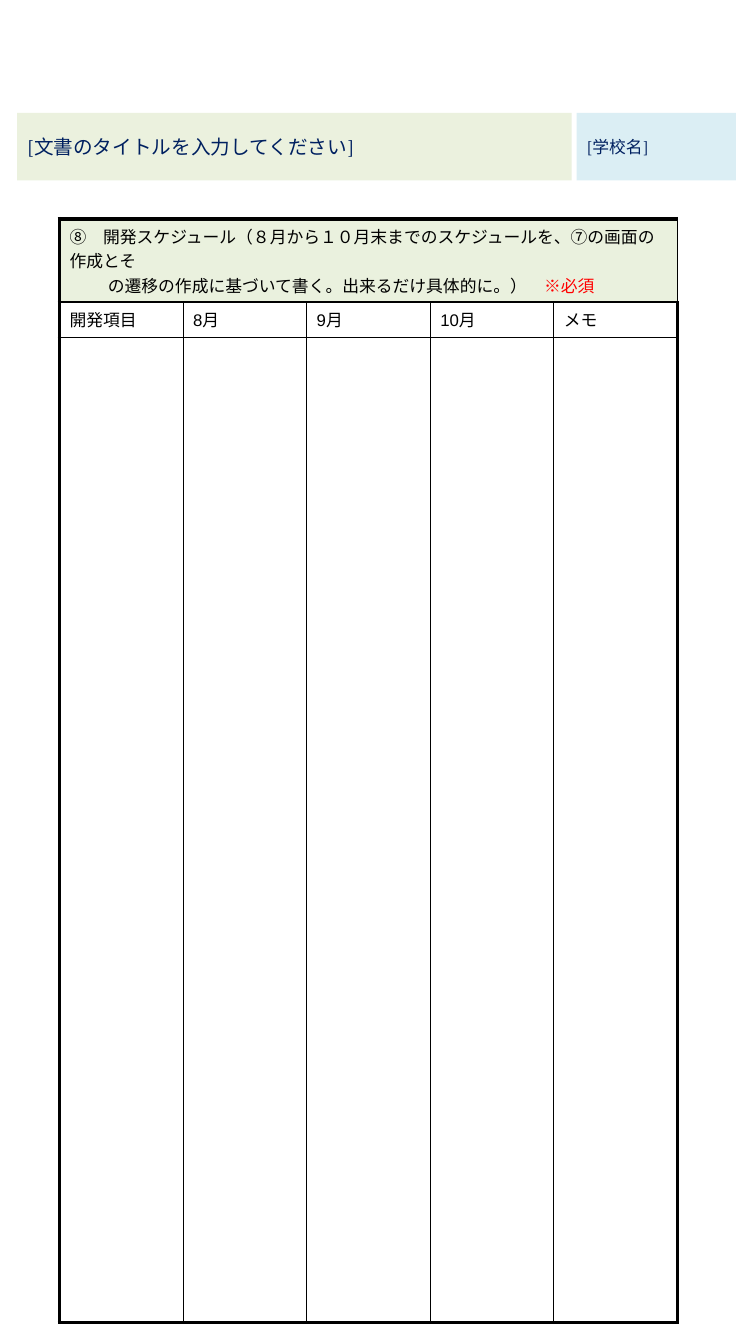
import pptx
import pptx.dml.color
import pptx.enum.shapes
import pptx.enum.text
import pptx.oxml
import pptx.oxml.ns
import pptx.util

Inches = pptx.util.Inches
Pt = pptx.util.Pt
COLORS = {"green": "EBF1DE", "head": "EAF1DE", "blue": "DBEEF4",
          "navy": "002060", "black": "000000", "red": "FF0000"}
ROWS = [0.82, 0.35, 9.77]
COLS = 5
LABELS = ["開発項目", "8月", "9月", "10月", "メモ"]
LINES = ["⑧　開発スケジュール（８月から１０月末までのスケジュールを、⑦の画面の作成とそ",
         "の遷移の作成に基づいて書く。出来るだけ具体的に。）　"]


def color(name):
    return pptx.dml.color.RGBColor.from_string(COLORS[name])


def write(para, text, size=12, font="Calibri", tint="black", align=None, indent=0):
    run = para.add_run()
    run.text = text
    run.font.size = Pt(size)
    run.font.name = font
    run.font.color.rgb = color(tint)
    if align is not None:
        para.alignment = align
    if indent:
        para._p.get_or_add_pPr().set("marL", str(Inches(indent)))


def band(shape, left, width, fill, text, size):
    shape.left, shape.top = Inches(left), Inches(1.12)
    shape.width, shape.height = Inches(width), Inches(0.67)
    shape.fill.solid()
    shape.fill.fore_color.rgb = color(fill)
    frame = shape.text_frame
    frame.word_wrap = True
    frame.auto_size = pptx.enum.text.MSO_AUTO_SIZE.NONE
    frame.vertical_anchor = pptx.enum.text.MSO_ANCHOR.MIDDLE
    write(frame.paragraphs[0], text, size=size, font="Cambria", tint="navy",
          align=pptx.enum.text.PP_ALIGN.JUSTIFY)


def border(cell, widths):
    props = cell._tc.get_or_add_tcPr()
    for side, width in zip("LRTB", widths):
        props.append(pptx.oxml.parse_xml(
            f'<a:ln{side} {pptx.oxml.ns.nsdecls("a")} w="{Pt(width)}">'
            f'<a:solidFill><a:srgbClr val="{COLORS["black"]}"/></a:solidFill>'
            f'</a:ln{side}>'))


def grid(slide):
    frame = slide.shapes.add_table(len(ROWS), COLS, Inches(0.59), Inches(2.17),
                                   Inches(6.13), Inches(sum(ROWS)))
    table = frame.table
    table.first_row = table.horz_banding = False
    for row, height in zip(table.rows, ROWS):
        row.height = Inches(height)
    rules = [3, 1, 0.75, 3]
    for r in range(len(ROWS)):
        for c in range(COLS):
            cell = table.cell(r, c)
            border(cell, [3 if c == 0 else 0.75, 3 if c == COLS - 1 else 0.75,
                          rules[r], rules[r + 1]])
            cell.fill.background()
    head = table.cell(0, 0)
    head.merge(table.cell(0, COLS - 1))
    head.fill.solid()
    head.fill.fore_color.rgb = color("head")
    write(head.text_frame.paragraphs[0], LINES[0])
    para = head.text_frame.add_paragraph()
    write(para, LINES[1], indent=0.38)
    write(para, "※必須", tint="red")
    for c, label in enumerate(LABELS):
        write(table.cell(1, c).text_frame.paragraphs[0], label, font="Arial")


def main():
    deck = pptx.Presentation()
    deck.slide_width, deck.slide_height = Inches(7.5), Inches(13.33)
    slide = deck.slides.add_slide(deck.slide_layouts[5])
    band(slide.shapes.title, 0.17, 5.5, "green", "[文書のタイトルを入力してください]", 14)
    school = slide.shapes.add_shape(pptx.enum.shapes.MSO_SHAPE.RECTANGLE, 0, 0, 0, 0)
    school.shadow.inherit = False
    school.line.fill.background()
    band(school, 5.72, 1.58, "blue", "[学校名]", 12)
    grid(slide)
    deck.save("out.pptx")


if __name__ == "__main__":
    main()
